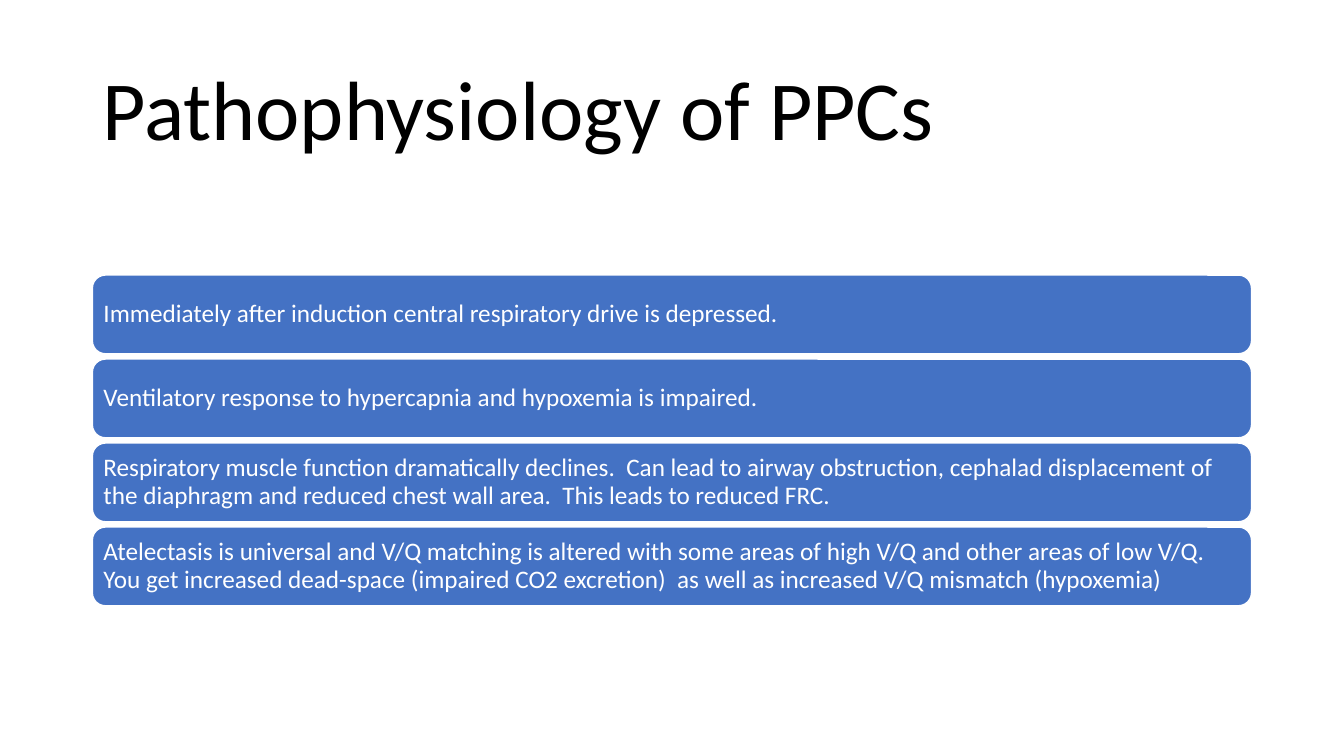
from dataclasses import dataclass

from pptx import Presentation
from pptx.dml.color import RGBColor
from pptx.enum.shapes import MSO_SHAPE
from pptx.enum.text import MSO_ANCHOR, MSO_AUTO_SIZE, PP_ALIGN
from pptx.slide import Slide
from pptx.text.text import TextFrame
from pptx.util import Emu, Pt

ROUNDED = MSO_SHAPE.ROUNDED_RECTANGLE
MIDDLE = MSO_ANCHOR.MIDDLE
LEFT = PP_ALIGN.LEFT
NO_AUTOFIT = MSO_AUTO_SIZE.NONE

EMU_PER_PX = 9525
FONT = "Calibri"
COLOURS = {"title": "000000", "bar": "4472C4", "bar_text": "FFFFFF", "outline": "FFFFFF"}
TITLE_ONLY_LAYOUT = 5

MARGIN = 88
CONTENT_WIDTH = 1104
FIRST_BAR_TOP = 262
BAR_HEIGHT = 75
BAR_STEP = 80
BAR_INSET = 7


@dataclass(frozen=True)
class TextStyle:
    size: int
    colour: str


TITLE_STYLE = TextStyle(60, "title")
BAR_STYLE = TextStyle(18, "bar_text")

STATEMENTS = [
    "Immediately after induction central respiratory drive is depressed.",
    "Ventilatory response to hypercapnia and hypoxemia is impaired.",
    "Respiratory muscle function dramatically declines.  Can lead to airway obstruction, "
    "cephalad displacement of the diaphragm and reduced chest wall area.  "
    "This leads to reduced FRC.",
    "Atelectasis is universal and V/Q matching is altered with some areas of high V/Q "
    "and other areas of low V/Q.  You get increased dead-space (impaired CO2 excretion)  "
    "as well as increased V/Q mismatch (hypoxemia)",
]


def px(length: int) -> Emu:
    return Emu(length * EMU_PER_PX)


def colour(name: str) -> RGBColor:
    return RGBColor.from_string(COLOURS[name])


def write_text(frame: TextFrame, text: str, style: TextStyle) -> None:
    frame.text = text
    frame.word_wrap = True
    frame.auto_size = NO_AUTOFIT
    frame.vertical_anchor = MIDDLE
    paragraph = frame.paragraphs[0]
    paragraph.alignment = LEFT
    paragraph.line_spacing = 0.9
    paragraph.font.name = FONT
    paragraph.font.size = Pt(style.size)
    paragraph.font.color.rgb = colour(style.colour)


def add_title(page: Slide, text: str) -> None:
    title = page.shapes.title
    title.left, title.top = px(MARGIN), px(38)
    title.width, title.height = px(CONTENT_WIDTH), px(139)
    write_text(title.text_frame, text, TITLE_STYLE)


def add_bar(page: Slide, top: int, text: str) -> None:
    bar = page.shapes.add_shape(
        ROUNDED, px(MARGIN), px(top), px(CONTENT_WIDTH), px(BAR_HEIGHT)
    )
    bar.shadow.inherit = False
    bar.fill.solid()
    bar.fill.fore_color.rgb = colour("bar")
    bar.line.color.rgb = colour("outline")
    bar.line.width = Pt(1)
    frame = bar.text_frame
    frame.margin_left = frame.margin_right = px(BAR_INSET)
    frame.margin_top = frame.margin_bottom = px(BAR_INSET)
    write_text(frame, text, BAR_STYLE)


def main() -> None:
    deck = Presentation()
    deck.slide_width, deck.slide_height = px(1280), px(720)
    page = deck.slides.add_slide(deck.slide_layouts[TITLE_ONLY_LAYOUT])
    add_title(page, "Pathophysiology of PPCs")
    for index, statement in enumerate(STATEMENTS):
        add_bar(page, FIRST_BAR_TOP + index * BAR_STEP, statement)
    deck.save("out.pptx")


if __name__ == "__main__":
    main()
